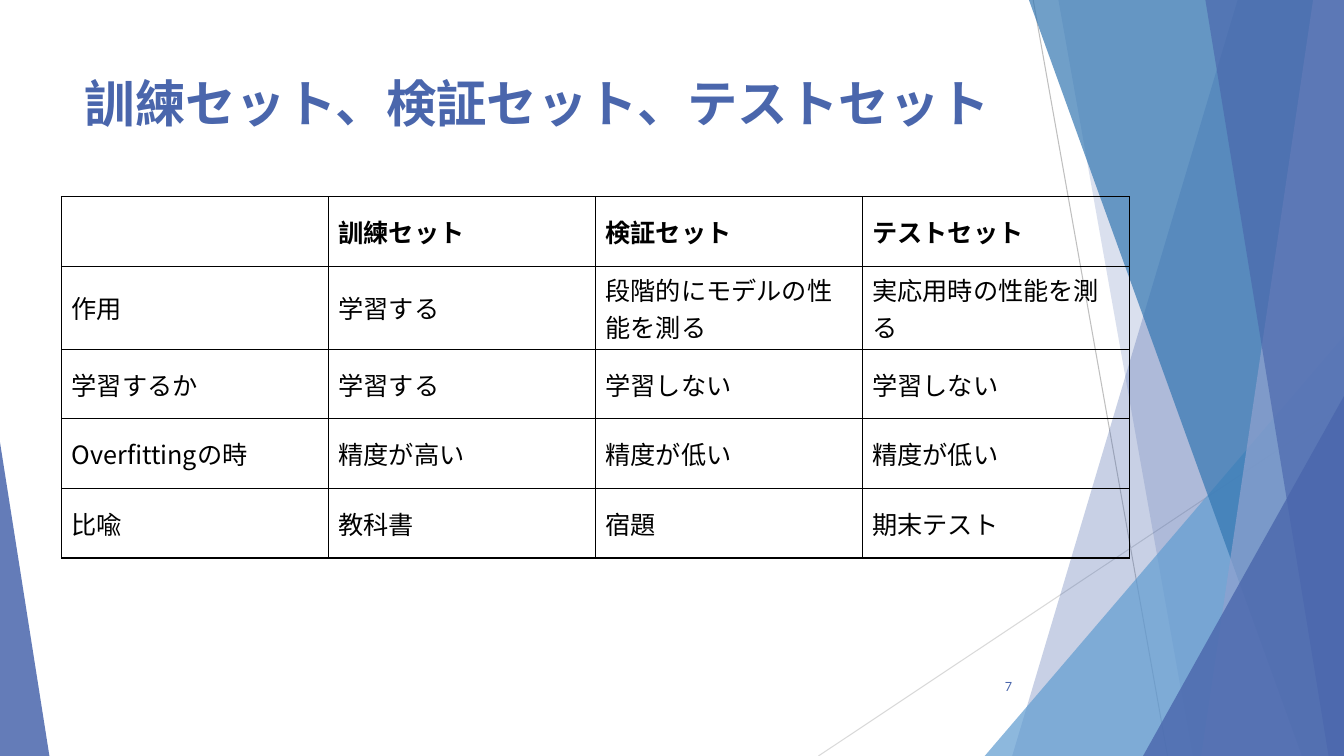
"""Build the slide comparing training, validation and test sets."""
from lxml.etree import SubElement
from pptx import Presentation
from pptx.dml.color import RGBColor
from pptx.enum.shapes import MSO_CONNECTOR, MSO_SHAPE
from pptx.enum.text import MSO_ANCHOR as Anchor, PP_ALIGN as Align
from pptx.oxml.ns import qn
from pptx.util import Pt

WIDTH, HEIGHT = 960, 540
INDIGO = RGBColor(0x4A, 0x66, 0xAC)
SKY = RGBColor(0x62, 0x9D, 0xD1)
OCEAN = RGBColor(0x34, 0x77, 0xB2)
LAVENDER = RGBColor(0x90, 0xA2, 0xCF)
GRAY = RGBColor(0xBF, 0xBF, 0xBF)
PALE_GRAY = RGBColor(0xD9, 0xD9, 0xD9)
BLACK = RGBColor(0, 0, 0)
CJK_FONT, LATIN_FONT = "Noto Sans CJK JP", "Lato"

COMPARISON = [
    ["", "訓練セット", "検証セット", "テストセット"],
    ["作用", "学習する", "段階的にモデルの性能を測る", "実応用時の性能を測る"],
    ["学習するか", "学習する", "学習しない", "学習しない"],
    ["Overfittingの時", "精度が高い", "精度が低い", "精度が低い"],
    ["比喩", "教科書", "宿題", "期末テスト"],
]
ROW_HEIGHTS = [49.7, 59.3, 49.7, 49.7, 49.7]


def write(frame, text, size=18, color=BLACK, font=CJK_FONT, bold=False, align=Align.LEFT):
    paragraph = frame.paragraphs[0]
    paragraph.alignment = align
    run = paragraph.add_run()
    run.text = text
    run.font.size, run.font.bold, run.font.name = Pt(size), bold, font
    run.font.color.rgb = color
    SubElement(run._r.get_or_add_rPr(), qn("a:ea"), typeface=font)


class Deck:
    def __init__(self):
        self.presentation = Presentation()
        self.presentation.slide_width = Pt(WIDTH)
        self.presentation.slide_height = Pt(HEIGHT)
        self.slide = self.presentation.slides.add_slide(self.presentation.slide_layouts[5])
        self.shapes = self.slide.shapes

    def line(self, x1, y1, x2, y2, color):
        ray = self.shapes.add_connector(MSO_CONNECTOR.STRAIGHT, Pt(x1), Pt(y1), Pt(x2), Pt(y2))
        ray.line.color.rgb = color
        ray.line.width = Pt(0.75)
        SubElement(ray._element.spPr, qn("a:effectLst"))

    def tint(self, shape, color, opacity):
        shape.shadow.inherit = False
        shape.line.fill.background()
        shape.fill.solid()
        shape.fill.fore_color.rgb = color
        srgb = shape._element.spPr.find(".//" + qn("a:srgbClr"))
        SubElement(srgb, qn("a:alpha"), val=str(opacity * 1000))

    def ribbon(self, top_left, bottom_left, color, opacity):
        builder = self.shapes.build_freeform(top_left, 0, scale=Pt(1))
        builder.add_line_segments([(WIDTH, 0), (WIDTH, HEIGHT), (bottom_left, HEIGHT)])
        self.tint(builder.convert_to_shape(), color, opacity)

    def corner(self, left, top, width, apex, color, opacity):
        triangle = self.shapes.add_shape(
            MSO_SHAPE.ISOSCELES_TRIANGLE, Pt(left), Pt(top), Pt(width), Pt(HEIGHT - top))
        triangle.adjustments[0] = apex
        self.tint(triangle, color, opacity)

    def title(self, text, left, top, width, height, **style):
        heading = self.shapes.title
        heading.left, heading.top = Pt(left), Pt(top)
        heading.width, heading.height = Pt(width), Pt(height)
        heading.text_frame.vertical_anchor = Anchor.BOTTOM
        write(heading.text_frame, text, **style)

    def text(self, text, left, top, width, height, **style):
        box = self.shapes.add_textbox(Pt(left), Pt(top), Pt(width), Pt(height))
        box.text_frame.word_wrap = True
        box.text_frame.vertical_anchor = Anchor.MIDDLE
        write(box.text_frame, text, **style)

    def border(self, cell):
        properties = cell._tc.get_or_add_tcPr()
        for side in ("lnL", "lnR", "lnT", "lnB"):
            edge = SubElement(properties, qn(f"a:{side}"), w=str(Pt(1)))
            SubElement(SubElement(edge, qn("a:solidFill")), qn("a:srgbClr"), val=str(BLACK))

    def table(self, rows, left, top, width, heights):
        grid = self.shapes.add_table(
            len(rows), len(rows[0]), Pt(left), Pt(top), Pt(width), Pt(sum(heights))).table
        grid.first_row = grid.horz_banding = False
        for r, row in enumerate(rows):
            grid.rows[r].height = Pt(heights[r])
            for c, entry in enumerate(row):
                cell = grid.cell(r, c)
                cell.vertical_anchor = Anchor.MIDDLE
                self.border(cell)
                cell.fill.background()
                if entry:
                    write(cell.text_frame, entry, bold=r == 0)


def main():
    deck = Deck()
    deck.line(738, 0, 834, HEIGHT, GRAY)
    deck.line(WIDTH, 290, 584.6, HEIGHT, PALE_GRAY)
    deck.ribbon(884, 723, INDIGO, 30)
    deck.ribbon(756, 852, INDIGO, 20)
    deck.corner(703.4, 240, 256.6, 1, SKY, 72)
    deck.ribbon(735, 929.5, OCEAN, 70)
    deck.ribbon(938, 858, LAVENDER, 70)
    deck.ribbon(861, 949, INDIGO, 65)
    deck.corner(816.5, 283, 143.5, 1, INDIGO, 80)
    deck.corner(0, 316, 35.3, 0, INDIGO, 85)

    deck.title("訓練セット、検証セット、テストセット", 53.3, 45.2, 677, 53.3,
               size=36, color=INDIGO, bold=True)
    deck.text("7", 676, 476, 54, 28.8, size=9, color=INDIGO, font=LATIN_FONT, align=Align.RIGHT)
    deck.table(COMPARISON, 44, 140.5, 762.6, ROW_HEIGHTS)
    deck.presentation.save("out.pptx")


if __name__ == "__main__":
    main()
